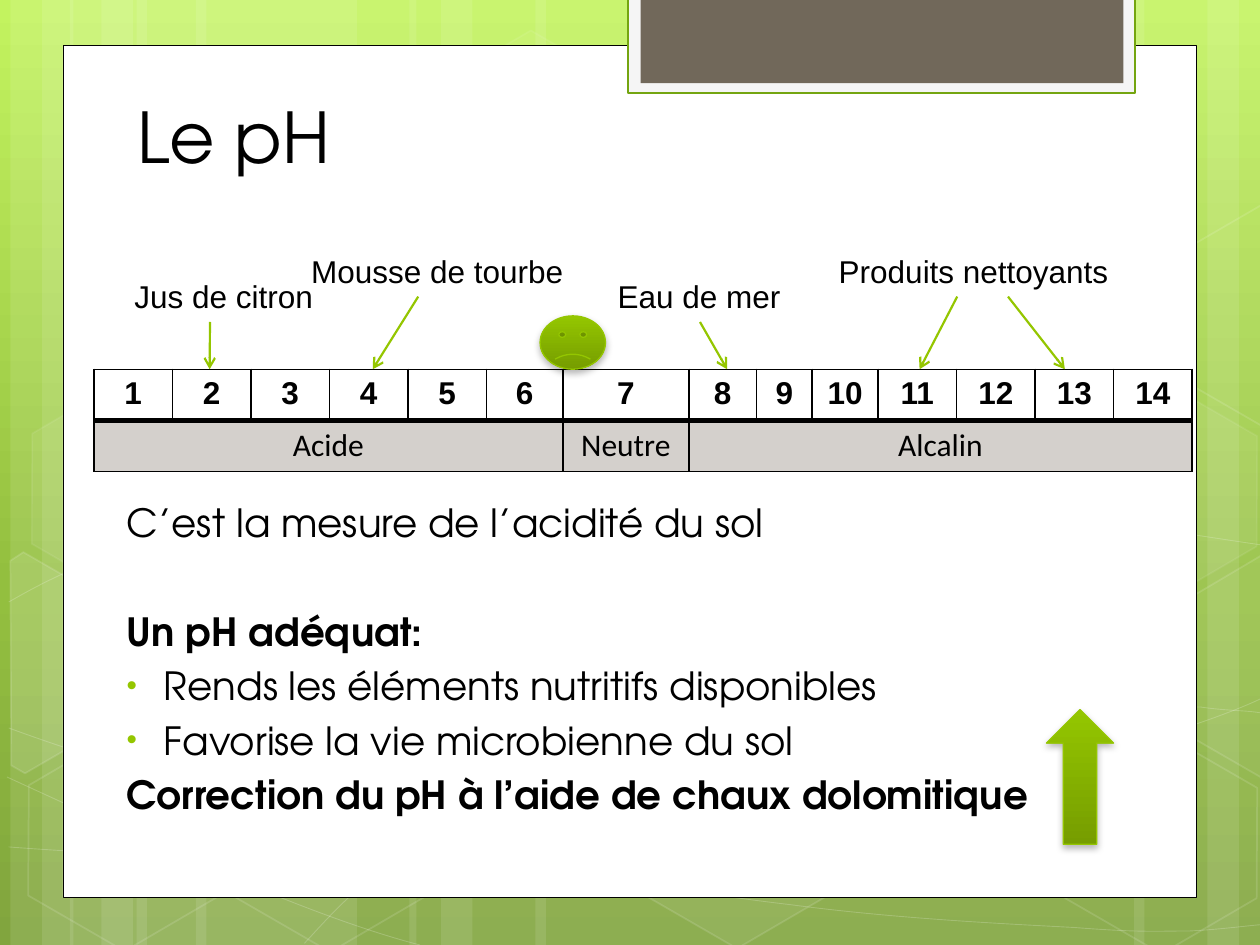
import math

from pptx import Presentation
from pptx import util as u
from pptx.dml.color import RGBColor
from pptx.enum import shapes, text
from pptx.oxml.ns import qn
from lxml import etree

Pt = u.Pt
C = {"black": "000000", "white": "FFFFFF", "green": "94C600", "dark": "769D00",
     "edge": "74A510", "taupe": "71685A", "pale": "F5F5F5", "grey": "D4D0CC",
     "sky": "C3F35F", "leaf": "93BF3F", "moss": "81A53E"}
HEAD, SANS, ZONE = "TeX Gyre Adventor", "Arial", "Calibri"

TITLE = "Le pH"
BODY = [("C’est la mesure de l’acidité du sol", "plain", 4.4),
        ("Un pH adéquat:", "bold", 35.5),
        ("Rends les éléments nutritifs disponibles", "bullet", 4.4),
        ("Favorise la vie microbienne du sol", "bullet", 4.4),
        ("Correction du pH à l’aide de chaux dolomitique", "bold", 4.4)]
WIDTHS = [44.9] * 5 + [43.7, 72, 38.7, 31.8, 37.6] + [44.9] * 4
ZONES = [("Acide", 0, 5), ("Neutre", 6, 6), ("Alcalin", 7, 13)]
TABLE_X, TABLE_Y, ROW_H = 53.6, 211, 29.2
EXAMPLES = [("Jus de citron", 69.7, 155, 117, [(120, 119.8)]),
            ("Mousse de tourbe", 170.8, 140.5, 160, [(239, 213)]),
            ("Eau de mer", 345.8, 155, 109, [(400, 415.5)]),
            ("Produits nettoyants", 472.2, 140.5, 170, [(547, 525.5), (576, 608.5)])]
LABEL_H = 29

BANDS = [(78, 126), (6, 36), (24, 60), (112, 126), (40, 36), (58, 60),
         (528, 126), (690, 36), (648, 60), (306, 222), (234, 36), (252, 60)]
TILT = 30
HEXAGONS = [(240.5, 26, 4, 8), (358, 424, 6, 12), (8, 425.5, 0, 12),
            (10, 224.5, 7, 8), (125.5, 426, 0, 12), (542, 326, 10, 12),
            (600.5, 427, 0, 12), (600.5, 226, 7, 8)]
LEFT_CUT = [(6, 320.5), (13.5, 315.5), (69, 347), (68.5, 410.5), (14.5, 442), (6, 437)]
RIGHT_CUT = [(666.5, 349), (720.5, 317.5), (726.5, 321), (726.5, 441.5),
             (721.5, 444), (666.5, 412.5)]
UPPER_CUT = [(x, y - 200.5) for x, y in RIGHT_CUT]
CUTS = [(LEFT_CUT, (26, 385.2), 10), (RIGHT_CUT, (709.2, 374.4), 4),
        (UPPER_CUT, (709.2, 173.9), 0)]
CURVES = [
    [(5, 484.5), (44, 487), (83, 489), (137, 488), (191, 487), (258, 486), (330, 479),
     (402, 472), (504, 458), (570, 444), (636, 431), (703, 409), (725, 397)],
    [(5, 343.5), (26, 332), (47, 321), (87, 310), (128, 299.5), (186.5, 283.5),
     (250, 278.5), (314, 273.5), (391.5, 273), (471, 278.5), (550, 284), (682, 306),
     (725, 312.5)],
    [(4, 444), (91, 484), (178, 523.5), (240.5, 539.5)],
    [(5, 416), (27, 424), (50, 432), (92, 443.5), (134, 454), (196.5, 472),
     (257, 484.5), (317, 497), (392, 510), (452, 517), (512, 525), (576, 528),
     (614, 530), (652, 533), (662, 531.5), (680.5, 531.5), (699, 531), (712, 529),
     (725, 528.5)],
    [(174, 539), (187, 525), (200, 510.5), (217.5, 497.5), (235, 484.5), (259, 470),
     (279.5, 460), (299.5, 450), (312, 445.5), (338.5, 438.5), (364, 431),
     (412.5, 421), (438, 416), (464, 411), (467, 411), (489.5, 409.5), (512, 407.5),
     (547, 405.5), (571.5, 404.5), (597, 404), (638, 404.5), (638, 404.5),
     (654, 404.5), (670, 404.5), (686, 404.5), (699, 405.5), (711, 406), (718, 407),
     (724, 407.5), (722, 407), (724, 407.5)]]

prs = Presentation()
prs.slide_width, prs.slide_height = Pt(720), Pt(540)
s = prs.slides.add_slide(prs.slide_layouts[1])


def rgb(name):
    return RGBColor.from_string(C[name])


def sub(parent, tag, **attrs):
    return etree.SubElement(parent, qn(tag), {k: str(v) for k, v in attrs.items()})


def gradient(fill, owner, stops):
    fill.gradient()
    grad = owner.find(".//" + qn("a:gradFill"))
    for child in list(grad):
        grad.remove(child)
    gs_list = sub(grad, "a:gsLst")
    for pos, name in stops:
        sub(sub(gs_list, "a:gs", pos=pos * 1000), "a:srgbClr", val=C[name])
    sub(grad, "a:lin", ang=5400000, scaled=0)


def style(sp, fill=None, alpha=100, line=None, width=1, line_alpha=100):
    sp.shadow.inherit = False
    for part, name, opacity, route in ((sp.fill, fill, alpha, "a:solidFill"),
                                       (sp.line.fill, line, line_alpha, "a:ln")):
        if not name:
            part.background()
            continue
        part.solid()
        part.fore_color.rgb = rgb(name)
        if opacity < 100:
            clr = sp._element.spPr.find(qn(route)).find(".//" + qn("a:srgbClr"))
            sub(clr, "a:alpha", val=opacity * 1000)
    if line:
        sp.line.width = Pt(width)


def shape(kind, x, y, w, h):
    return s.shapes.add_shape(kind, Pt(x), Pt(y), Pt(w), Pt(h))


def outline(points, closed):
    fb = s.shapes.build_freeform(*points[0], scale=Pt(1))
    fb.add_line_segments(points[1:], close=closed)
    return fb.convert_to_shape()


def curve(knots):
    sp = outline(knots, False)
    segments = list(sp._element.iter(qn("a:lnTo")))
    track = segments[0].getparent()
    for i in range(0, len(segments), 3):
        bend = sub(track, "a:cubicBezTo")
        for segment in segments[i:i + 3]:
            bend.append(segment[0])
            track.remove(segment)
    return sp


def tilted(points, centre):
    cos, sin = math.cos(math.radians(TILT)), math.sin(math.radians(TILT))
    cx, cy = centre
    sp = outline([(cx + (x - cx) * cos + (y - cy) * sin,
                   cy - (x - cx) * sin + (y - cy) * cos) for x, y in points], True)
    sp.rotation = TILT
    return sp


def write(p, words, size, font, bold=False):
    r = p.add_run()
    r.text = words
    r.font.size, r.font.name, r.font.bold = Pt(size), font, bold
    r.font.color.rgb = rgb("black")


def place(sp, x, y, w, h):
    sp.left, sp.top, sp.width, sp.height = Pt(x), Pt(y), Pt(w), Pt(h)
    s.shapes._spTree.append(sp._element)
    sp.text_frame.auto_size = text.MSO_AUTO_SIZE.NONE
    return sp.text_frame


def fill_cell(cell, words, font, bold, fill, top, bottom):
    cell.text_frame.paragraphs[0].alignment = text.PP_ALIGN.CENTER
    if words:
        write(cell.text_frame.paragraphs[0], words, 18, font, bold)
    if fill:
        cell.fill.solid()
        cell.fill.fore_color.rgb = rgb(fill)
    else:
        cell.fill.background()
    tc_pr = cell._tc.get_or_add_tcPr()
    for i, (side, width) in enumerate(zip("LRTB", (1, 1, top, bottom))):
        ln = sub(tc_pr, "a:ln" + side, w=Pt(width))
        sub(sub(ln, "a:solidFill"), "a:srgbClr", val=C["black"])
        tc_pr.insert(i, ln)


K = shapes.MSO_SHAPE
gradient(s.background.fill, s.element, [(0, "sky"), (62, "leaf"), (100, "moss")])
for x, w in BANDS:
    style(shape(K.RECTANGLE, x, 0, w, 540), "white", 10)
for knots in CURVES:
    style(curve(knots), line="white", width=0.5, line_alpha=20)
for x, y, alpha, line_alpha in HEXAGONS:
    sp = shape(K.HEXAGON, x, y, 126, 109.5)
    sp.adjustments[0] = 0.285
    sp.rotation = TILT
    style(sp, "white" if alpha else None, alpha, "white", 1, line_alpha)
for points, centre, alpha in CUTS:
    style(tilted(points, centre), "white" if alpha else None, alpha, "white", 1, 12)
style(shape(K.RECTANGLE, 36, 26, 648, 487), "white", line="black", width=0.5)
style(shape(K.RECTANGLE, 359, -1.5, 289.5, 54.5), "pale", line="edge", width=1.25)
style(shape(K.RECTANGLE, 366, -1.5, 276, 49), "taupe")

tf = place(s.shapes.title, 71.5, 43, 553, 62)
tf.vertical_anchor = text.MSO_ANCHOR.BOTTOM
tf.paragraphs[0].alignment = text.PP_ALIGN.LEFT
write(tf.paragraphs[0], TITLE, 40, HEAD)

tf = place(s.placeholders[1], 59.5, 281.5, 572.5, 214.5)
for i, (words, role, before) in enumerate(BODY):
    p = tf.paragraphs[0] if i == 0 else tf.add_paragraph()
    p.space_before = Pt(before)
    p_pr = p._p.get_or_add_pPr()
    p_pr.set("marL", str(Pt(27)))
    p_pr.set("indent", str(-Pt(21.4)))
    if role == "bullet":
        sub(sub(p_pr, "a:buClr"), "a:srgbClr", val=C["green"])
        sub(p_pr, "a:buSzPct", val=76000)
        sub(p_pr, "a:buFont", typeface=SANS)
        sub(p_pr, "a:buChar", char="•")
    else:
        sub(p_pr, "a:buNone")
    write(p, words, 22.2, HEAD, role == "bold")

table = s.shapes.add_table(2, len(WIDTHS), Pt(TABLE_X), Pt(TABLE_Y),
                           Pt(sum(WIDTHS)), Pt(2 * ROW_H)).table
table.first_row = table.horz_banding = False
for row in table.rows:
    row.height = Pt(ROW_H)
zone_names = {first: name for name, first, last in ZONES}
for name, first, last in ZONES:
    if last > first:
        table.cell(1, first).merge(table.cell(1, last))
for i, w in enumerate(WIDTHS):
    table.columns[i].width = Pt(w)
    fill_cell(table.cell(0, i), str(i + 1), SANS, True, None, 1, 3)
    fill_cell(table.cell(1, i), zone_names.get(i), ZONE, False, "grey", 3, 1)

for words, x, y, w, arrows in EXAMPLES:
    tf = s.shapes.add_textbox(Pt(x), Pt(y), Pt(w), Pt(LABEL_H)).text_frame
    tf.word_wrap = False
    tf.auto_size = text.MSO_AUTO_SIZE.SHAPE_TO_FIT_TEXT
    write(tf.paragraphs[0], words, 18, SANS)
    for start, end in arrows:
        cx = s.shapes.add_connector(shapes.MSO_CONNECTOR.STRAIGHT, Pt(start),
                                    Pt(y + LABEL_H), Pt(end), Pt(TABLE_Y))
        cx.line.color.rgb = rgb("green")
        cx.line.width = Pt(1.25)
        sub(cx.line._get_or_add_ln(), "a:tailEnd", type="arrow")
        sub(cx._element.spPr, "a:effectLst")

smiley = shape(K.SMILEY_FACE, 308.6, 180.5, 37.4, 30.5)
smiley.adjustments[0] = -0.047
for sp in (smiley, shape(K.UP_ARROW, 598, 405.5, 38.3, 77)):
    style(sp, "green", line="green", width=0.75)
    gradient(sp.fill, sp._element.spPr, [(0, "green"), (100, "dark")])
    shadow = sub(sp._element.spPr.find(qn("a:effectLst")), "a:outerShdw",
                 blurRad=Pt(4), dist=Pt(2), dir=5400000, rotWithShape=0)
    sub(sub(shadow, "a:srgbClr", val=C["black"]), "a:alpha", val=28000)

prs.save("out.pptx")
